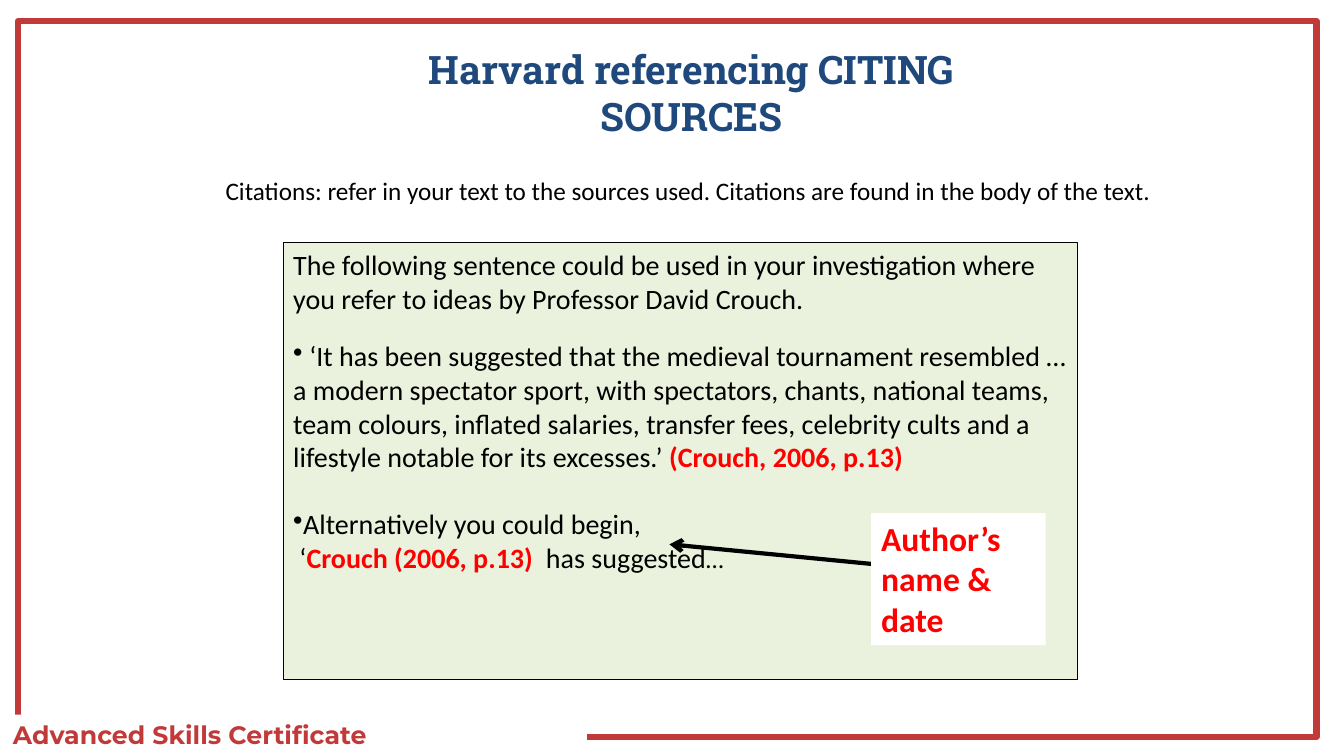
from pptx import Presentation
from pptx.dml.color import RGBColor
from pptx.enum.shapes import MSO_CONNECTOR, MSO_SHAPE
from pptx.enum.text import MSO_ANCHOR, PP_ALIGN
from pptx.oxml.ns import qn
from pptx.util import Inches, Pt
from lxml import etree

RECT = MSO_SHAPE.RECTANGLE
STRAIGHT = MSO_CONNECTOR.STRAIGHT
TOP, MIDDLE = MSO_ANCHOR.TOP, MSO_ANCHOR.MIDDLE
LEFT, CENTER = PP_ALIGN.LEFT, PP_ALIGN.CENTER

WIDE, HIGH = Inches(13.33), Inches(7.5)
COLORS = {
    "brand": "C23939",
    "navy": "1F497D",
    "green": "EAF1DD",
    "black": "000000",
    "white": "FFFFFF",
    "red": "FF0000",
}
BODY = {"name": "Calibri", "size": Pt(20), "bold": False, "color": "black"}
CITE = {**BODY, "bold": True, "color": "red"}
INTRO = {**BODY, "size": Pt(18)}
LABEL = {**CITE, "size": Pt(24)}
TITLE = {"name": "Roboto Slab", "size": Pt(28), "bold": True, "color": "navy"}
FOOTER = {"name": "Montserrat", "size": Pt(18), "bold": True, "color": "brand"}

# Each paragraph: bullet or not, points of space before, runs
PANEL = [
    (False, 0, [
        ("The following sentence could be used in your investigation where "
         "you refer to ideas by Professor David Crouch.", BODY)]),
    (True, 17, [
        (" ‘It has been suggested that the medieval tournament resembled …"
         "a modern spectator sport, with spectators, chants, national teams, "
         "team colours, inflated salaries, transfer fees, celebrity cults and "
         "a lifestyle notable for its excesses.’ ", BODY),
        ("(Crouch, 2006, p.13)", CITE)]),
    (True, 24, [("Alternatively you could begin,", BODY)]),
    (False, 0, [
        (" ‘", BODY),
        ("Crouch (2006, p.13) ", CITE),
        (" has suggested", BODY),
        ("…", INTRO)]),
]


def paint(name):
    return RGBColor.from_string(COLORS[name])


def scale(*shares):
    """Turn x, y, x, y ... percentages of the slide into lengths."""
    sides = (WIDE, HIGH) * 2
    return [int(side * share / 100) for side, share in zip(sides, shares)]


def style(font, look):
    for key, value in look.items():
        if key == "color":
            font.color.rgb = paint(value)
        else:
            setattr(font, key, value)


def write(shape, paras, anchor=TOP, align=LEFT):
    frame = shape.text_frame
    frame.word_wrap = True
    frame.vertical_anchor = anchor
    for index, (bullet, space, runs) in enumerate(paras):
        para = frame.add_paragraph() if index else frame.paragraphs[0]
        para.alignment = align
        if space:
            para.space_before = Pt(space)
        if bullet:
            mark = etree.SubElement(para._p.get_or_add_pPr(), qn("a:buChar"))
            mark.set("char", "•")
        for text, look in runs:
            run = para.add_run()
            run.text = text
            style(run.font, look)


def add_box(slide, area, fill=None, line=None, width=0):
    box = slide.shapes.add_shape(RECT, *scale(*area))
    box.shadow.inherit = False
    if fill:
        box.fill.solid()
        box.fill.fore_color.rgb = paint(fill)
    else:
        box.fill.background()
    if line:
        box.line.color.rgb = paint(line)
        box.line.width = Pt(width)
    else:
        box.line.fill.background()
    return box


def add_text(slide, area, text, look, **layout):
    box = slide.shapes.add_textbox(*scale(*area))
    write(box, [(False, 0, [(text, look)])], **layout)


def add_arrow(slide, ends):
    arrow = slide.shapes.add_connector(STRAIGHT, *scale(*ends))
    arrow.line.color.rgb = paint("black")
    arrow.line.width = Pt(3)
    tip = etree.SubElement(arrow.line._get_or_add_ln(), qn("a:tailEnd"))
    tip.set("type", "arrow")
    etree.SubElement(arrow._element.spPr, qn("a:effectLst"))


def main():
    deck = Presentation()
    deck.slide_width, deck.slide_height = WIDE, HIGH
    slide = deck.slides.add_slide(deck.slide_layouts[6])

    add_box(slide, (1.35, 2.8, 96.62, 94.67), line="brand", width=4.5)
    footer = add_box(slide, (0.23, 94.53, 43.44, 5.33), fill="white")
    write(footer, [(False, 0, [("Advanced Skills Certificate", FOOTER)])])

    add_text(slide, (28.73, 5.33, 45.46, 13.87),
             "Harvard referencing CITING SOURCES", TITLE,
             anchor=MIDDLE, align=CENTER)
    panel = add_box(slide, (21.08, 32.13, 59.11, 57.73),
                    fill="green", line="black", width=0.75)
    write(panel, PANEL)

    add_arrow(slide, (68.34, 75.2, 49.81, 72))
    label = add_box(slide, (64.82, 67.87, 12.98, 17.47), fill="white")
    write(label, [(False, 0, [("Author’s name & date", LABEL)])])

    add_text(slide, (16.05, 22.53, 79.52, 5.33),
             "Citations: refer in your text to the sources used. "
             "Citations are found in the body of the text.", INTRO)
    deck.save("out.pptx")


if __name__ == "__main__":
    main()
